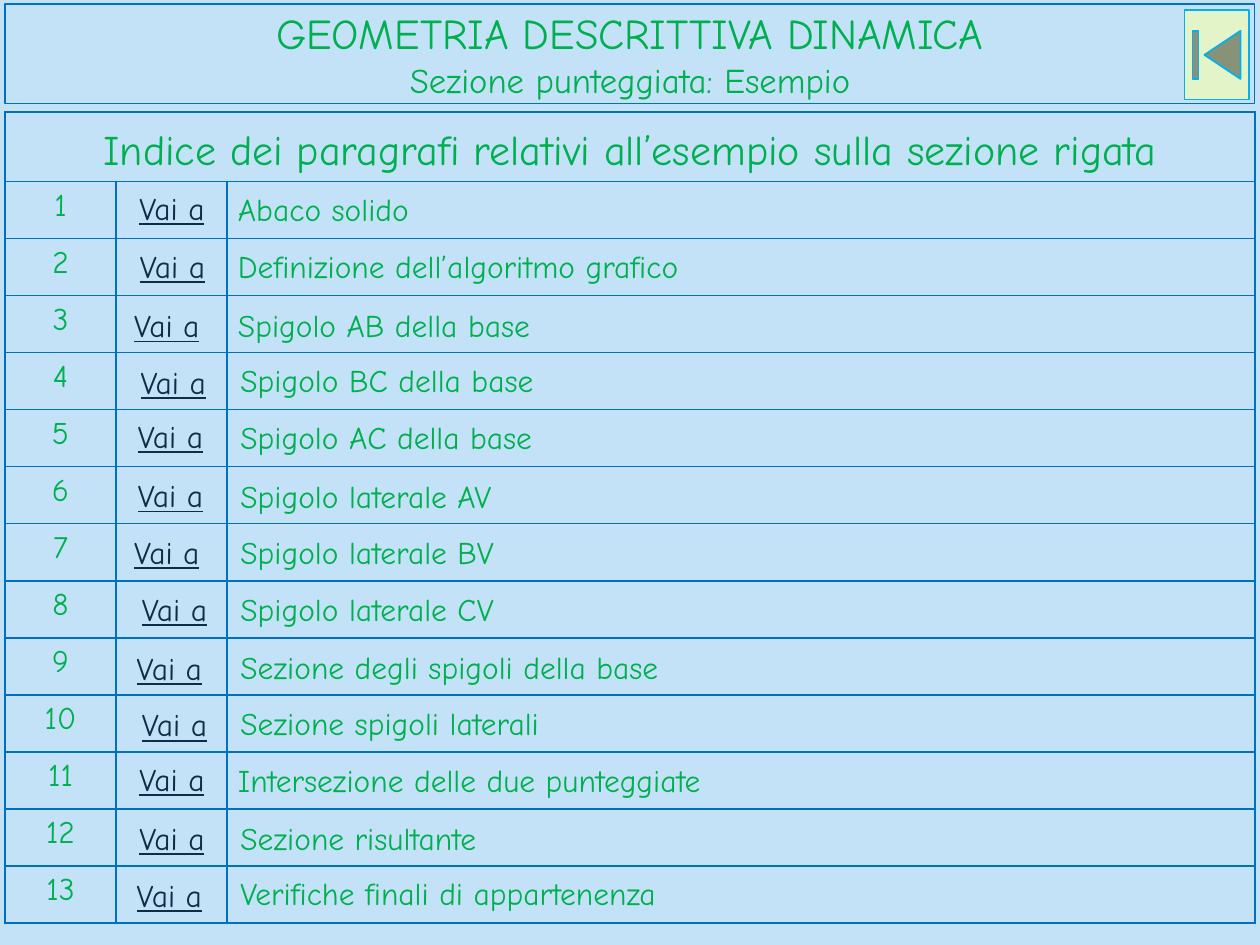
from dataclasses import dataclass
from typing import NamedTuple

from lxml import etree
from pptx import Presentation
from pptx.dml.color import RGBColor
from pptx.enum.shapes import MSO_SHAPE
from pptx.enum.text import MSO_ANCHOR, MSO_AUTO_SIZE, PP_ALIGN
from pptx.oxml.ns import qn
from pptx.util import Pt

RECTANGLE = MSO_SHAPE.RECTANGLE
BEGINNING_BUTTON = MSO_SHAPE.ACTION_BUTTON_BEGINNING
LEFT, CENTER = PP_ALIGN.LEFT, PP_ALIGN.CENTER
MIDDLE = MSO_ANCHOR.MIDDLE
GROW = MSO_AUTO_SIZE.SHAPE_TO_FIT_TEXT


@dataclass(frozen=True)
class Theme:
    font: str = "Comic Neue"
    page: str = "C3E2F7"
    border: str = "0070C0"
    text: str = "00B050"
    link: str = "0D2E46"
    button: str = "E3F4C9"
    button_line: str = "00B0F0"
    title_size: float = 24.3
    subtitle_size: float = 19.8
    heading_size: float = 24
    body_size: float = 18


class Frame(NamedTuple):
    """Left, top, width and height in points."""
    left: float
    top: float
    width: float
    height: float

    def lengths(self) -> list:
        return [Pt(value) for value in self]


class Entry(NamedTuple):
    """One index row: its label and where its label and link stand."""
    label: str
    label_left: float
    label_top: float
    link_left: float
    link_top: float


THEME = Theme()
PAGE_WIDTH, PAGE_HEIGHT = 720, 540
MARGIN = 2.9
CONTENT_WIDTH = PAGE_WIDTH - 2 * MARGIN
COLUMN_WIDTHS = (63.4, 63.4, 587.4)
HEADER_HEIGHT, ROW_HEIGHT, TEXT_HEIGHT = 39.6, 32.6, 28.8
LINK_WIDTH = 62.6
LABEL_RIGHT = 716.5

ENTRIES = (
    Entry("Abaco solido", 128.9, 105.1, 67, 104.4),
    Entry("Definizione dell’algoritmo grafico", 128.9, 137.5, 67.3, 137.5),
    Entry("Spigolo AB della base", 128.9, 171.4, 64.1, 171.4),
    Entry("Spigolo BC della base", 130.3, 203, 67.7, 203.8),
    Entry("Spigolo AC della base", 130.3, 235.4, 66.2, 234.7),
    Entry("Spigolo laterale AV", 130.3, 269.3, 66.2, 268.6),
    Entry("Spigolo laterale BV", 130.3, 301, 64.1, 301),
    Entry("Spigolo laterale CV", 130.3, 333.4, 68.4, 333.4),
    Entry("Sezione degli spigoli della base", 130.3, 366.5, 65.5, 367.2),
    Entry("Sezione spigoli laterali", 130.3, 398.9, 68.4, 399.6),
    Entry("Intersezione delle due punteggiate", 128.9, 431.3, 67, 430.6),
    Entry("Sezione risultante", 130.3, 464.4, 67, 464.4),
    Entry("Verifiche finali di appartenenza", 130.3, 496.1, 65.5, 496.8),
)


def add_span(para, text: str, size: float, color: str = THEME.text,
             underline: bool = False) -> None:
    span = para.add_run()
    span.text = text
    formats = {"name": THEME.font, "size": Pt(size)}
    if underline:
        formats["underline"] = True
    for name, value in formats.items():
        setattr(span.font, name, value)
    span.font.color.rgb = RGBColor.from_string(color)


def add_shape(page, kind, frame: Frame, fill: str, line: str, weight: float):
    shape = page.shapes.add_shape(kind, *frame.lengths())
    shape.shadow.inherit = False
    shape.fill.solid()
    shape.fill.fore_color.rgb = RGBColor.from_string(fill)
    shape.line.color.rgb = RGBColor.from_string(line)
    shape.line.width = Pt(weight)
    return shape


def add_text(page, frame: Frame, text: str, align=LEFT,
             size: float = THEME.body_size, color: str = THEME.text,
             underline: bool = False) -> None:
    box = page.shapes.add_textbox(*frame.lengths())
    for name, value in {"word_wrap": True, "auto_size": GROW}.items():
        setattr(box.text_frame, name, value)
    para = box.text_frame.paragraphs[0]
    para.alignment = align
    add_span(para, text, size, color, underline)


def set_borders(cell, color: str, weight: float) -> None:
    properties = cell._tc.get_or_add_tcPr()
    for side in ("a:lnL", "a:lnR", "a:lnT", "a:lnB"):
        line = etree.SubElement(properties, qn(side), w=str(Pt(weight)))
        fill = etree.SubElement(line, qn("a:solidFill"))
        etree.SubElement(fill, qn("a:srgbClr"), val=color)


def add_title(page) -> None:
    frame = Frame(MARGIN, 2.2, CONTENT_WIDTH, 56.9)
    box = add_shape(page, RECTANGLE, frame, THEME.page, THEME.border, 0.75)
    box.text_frame.word_wrap = True
    box.text_frame.vertical_anchor = MIDDLE
    para = box.text_frame.paragraphs[0]
    para.alignment = CENTER
    add_span(para, "GEOMETRIA DESCRITTIVA DINAMICA", THEME.title_size)
    para.add_line_break()
    add_span(para, "Sezione punteggiata: Esempio", THEME.subtitle_size)


def add_index_table(page) -> None:
    height = HEADER_HEIGHT + ROW_HEIGHT * len(ENTRIES)
    frame = Frame(MARGIN, 64.1, CONTENT_WIDTH, height)
    table = page.shapes.add_table(
        len(ENTRIES) + 1, len(COLUMN_WIDTHS), *frame.lengths()).table
    for name in ("first_row", "horz_banding"):
        setattr(table, name, False)
    for column, width in zip(table.columns, COLUMN_WIDTHS):
        column.width = Pt(width)
    for number, row in enumerate(table.rows):
        row.height = Pt(ROW_HEIGHT if number else HEADER_HEIGHT)
        for cell in row.cells:
            set_borders(cell, THEME.border, 1)
            cell.fill.background()
        if number:
            para = row.cells[0].text_frame.paragraphs[0]
            para.alignment = CENTER
            add_span(para, str(number), THEME.body_size)
    table.cell(0, 0).merge(table.cell(0, len(COLUMN_WIDTHS) - 1))


def add_entry(page, entry: Entry) -> None:
    label = Frame(entry.label_left, entry.label_top,
                  LABEL_RIGHT - entry.label_left, TEXT_HEIGHT)
    add_text(page, label, entry.label)
    link = Frame(entry.link_left, entry.link_top, LINK_WIDTH, TEXT_HEIGHT)
    add_text(page, link, "Vai a", CENTER, color=THEME.link, underline=True)


def main() -> None:
    deck = Presentation()
    deck.slide_width, deck.slide_height = Pt(PAGE_WIDTH), Pt(PAGE_HEIGHT)
    page = deck.slides.add_slide(deck.slide_layouts[6])
    page.background.fill.solid()
    page.background.fill.fore_color.rgb = RGBColor.from_string(THEME.page)

    # Title band
    add_title(page)

    # Index table with its heading and entries
    add_index_table(page)
    add_text(page, Frame(MARGIN, 67, CONTENT_WIDTH, 36),
             "Indice dei paragrafi relativi all’esempio sulla sezione rigata",
             CENTER, THEME.heading_size)
    for entry in ENTRIES:
        add_entry(page, entry)

    # Back-to-start button
    add_shape(page, BEGINNING_BUTTON, Frame(676.8, 5.8, 36.7, 51.1),
              THEME.button, THEME.button_line, 1)

    deck.save("out.pptx")


if __name__ == "__main__":
    main()
